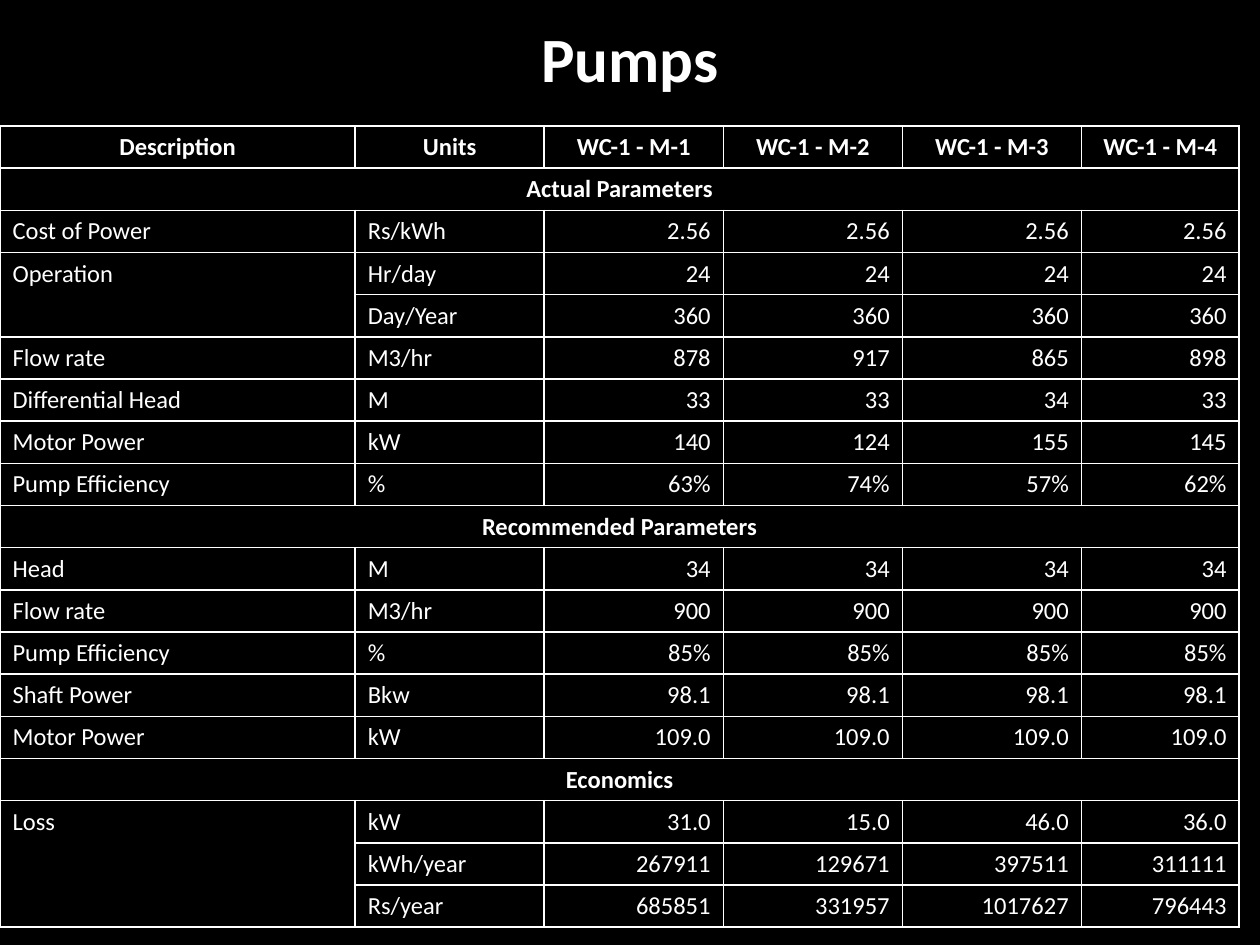
import dataclasses

import lxml.etree
import pptx
import pptx.dml.color
import pptx.enum.text
import pptx.oxml.ns
import pptx.util

Cm = pptx.util.Cm
Pt = pptx.util.Pt
Align = pptx.enum.text.PP_ALIGN
Anchor = pptx.enum.text.MSO_ANCHOR


@dataclasses.dataclass(frozen=True)
class Theme:
    background = pptx.dml.color.RGBColor(0, 0, 0)
    foreground = pptx.dml.color.RGBColor(255, 255, 255)
    font = "Calibri"
    title_size = Pt(36)
    cell_size = Pt(14)
    border_width = Pt(1)


THEME = Theme()
COLUMN_WIDTHS = [7.16, 3.81, 3.61, 3.61, 3.61, 3.18]
ROW_HEIGHT = 0.85
HANGING_INDENT = Cm(0.97)
HEADERS = ["Description", "Units"] + [f"WC-1 - M-{number}" for number in range(1, 5)]
SECTIONS = {
    "Actual Parameters": [
        ("Cost of Power", "Rs/kWh", ["2.56"] * 4),
        ("Operation", "Hr/day", ["24"] * 4),
        ("", "Day/Year", ["360"] * 4),
        ("Flow rate", "M3/hr", ["878", "917", "865", "898"]),
        ("Differential Head", "M", ["33", "33", "34", "33"]),
        ("Motor Power", "kW", ["140", "124", "155", "145"]),
        ("Pump Efficiency", "%", ["63%", "74%", "57%", "62%"]),
    ],
    "Recommended Parameters": [
        ("Head", "M", ["34"] * 4),
        ("Flow rate", "M3/hr", ["900"] * 4),
        ("Pump Efficiency", "%", ["85%"] * 4),
        ("Shaft Power", "Bkw", ["98.1"] * 4),
        ("Motor Power", "kW", ["109.0"] * 4),
    ],
    "Economics": [
        ("Loss", "kW", ["31.0", "15.0", "46.0", "36.0"]),
        ("", "kWh/year", ["267911", "129671", "397511", "311111"]),
        ("", "Rs/year", ["685851", "331957", "1017627", "796443"]),
    ],
}


def apply_format(target, values):
    for name, value in values.items():
        setattr(target, name, value)


def write_text(paragraph, text, size, bold, alignment):
    paragraph.alignment = alignment
    run = paragraph.add_run()
    run.text = text
    apply_format(run.font, {"name": THEME.font, "size": size, "bold": bold})
    run.font.color.rgb = THEME.foreground


def add_title(slide, text):
    title = slide.shapes.add_textbox(Cm(0), Cm(0.2), Cm(25.4), Cm(1.93))
    apply_format(title.text_frame, {"word_wrap": True, "vertical_anchor": Anchor.MIDDLE})
    write_text(title.text_frame.paragraphs[0], text, THEME.title_size, True, Align.CENTER)


def set_borders(cell):
    properties = cell._tc.get_or_add_tcPr()
    qualified = pptx.oxml.ns.qn
    for side in ("a:lnL", "a:lnR", "a:lnT", "a:lnB"):
        line = lxml.etree.SubElement(properties, qualified(side), w=str(int(THEME.border_width)))
        fill = lxml.etree.SubElement(line, qualified("a:solidFill"))
        lxml.etree.SubElement(fill, qualified("a:srgbClr"), val=str(THEME.foreground))


def write_cell(cell, text, alignment=Align.LEFT, bold=False, anchor=Anchor.BOTTOM):
    cell.vertical_anchor = anchor
    paragraph = cell.text_frame.paragraphs[0]
    write_text(paragraph, text, THEME.cell_size, bold, alignment)
    properties = paragraph._p.get_or_add_pPr()
    properties.set("marL", str(int(HANGING_INDENT)))
    properties.set("indent", str(-int(HANGING_INDENT)))


def write_section(table, start, heading, entries):
    last_column = len(COLUMN_WIDTHS) - 1
    table.cell(start, 0).merge(table.cell(start, last_column))
    write_cell(table.cell(start, 0), heading, Align.CENTER, True)
    label_row = start
    for row, (label, unit, values) in enumerate(entries, start + 1):
        if label:
            label_row = row
            is_group = row - start < len(entries) and not entries[row - start][0]
            write_cell(table.cell(row, 0), label, anchor=Anchor.TOP if is_group else Anchor.BOTTOM)
        elif row - start == len(entries) or entries[row - start][0]:
            table.cell(label_row, 0).merge(table.cell(row, 0))
        write_cell(table.cell(row, 1), unit)
        for column, value in enumerate(values, 2):
            write_cell(table.cell(row, column), value, Align.RIGHT)
    return start + 1 + len(entries)


def add_pump_table(slide):
    row_count = 1 + sum(1 + len(entries) for entries in SECTIONS.values())
    frame = slide.shapes.add_table(
        row_count, len(COLUMN_WIDTHS), Cm(0), Cm(2.54),
        Cm(sum(COLUMN_WIDTHS)), Cm(ROW_HEIGHT * row_count),
    )
    table = frame.table
    apply_format(table, {"first_row": False, "horz_banding": False})
    for column, width in zip(table.columns, COLUMN_WIDTHS):
        column.width = Cm(width)
    for row in table.rows:
        row.height = Cm(ROW_HEIGHT)
        for cell in row.cells:
            set_borders(cell)
            cell.fill.background()
    for column, header in enumerate(HEADERS):
        write_cell(table.cell(0, column), header, Align.CENTER, True, Anchor.TOP)
    next_row = 1
    for heading, entries in SECTIONS.items():
        next_row = write_section(table, next_row, heading, entries)


def main():
    presentation = pptx.Presentation()
    apply_format(presentation, {"slide_width": Cm(25.4), "slide_height": Cm(19.05)})
    slide = presentation.slides.add_slide(presentation.slide_layouts[6])
    slide.background.fill.solid()
    slide.background.fill.fore_color.rgb = THEME.background
    add_title(slide, "Pumps")
    add_pump_table(slide)
    presentation.save("out.pptx")


if __name__ == "__main__":
    main()
